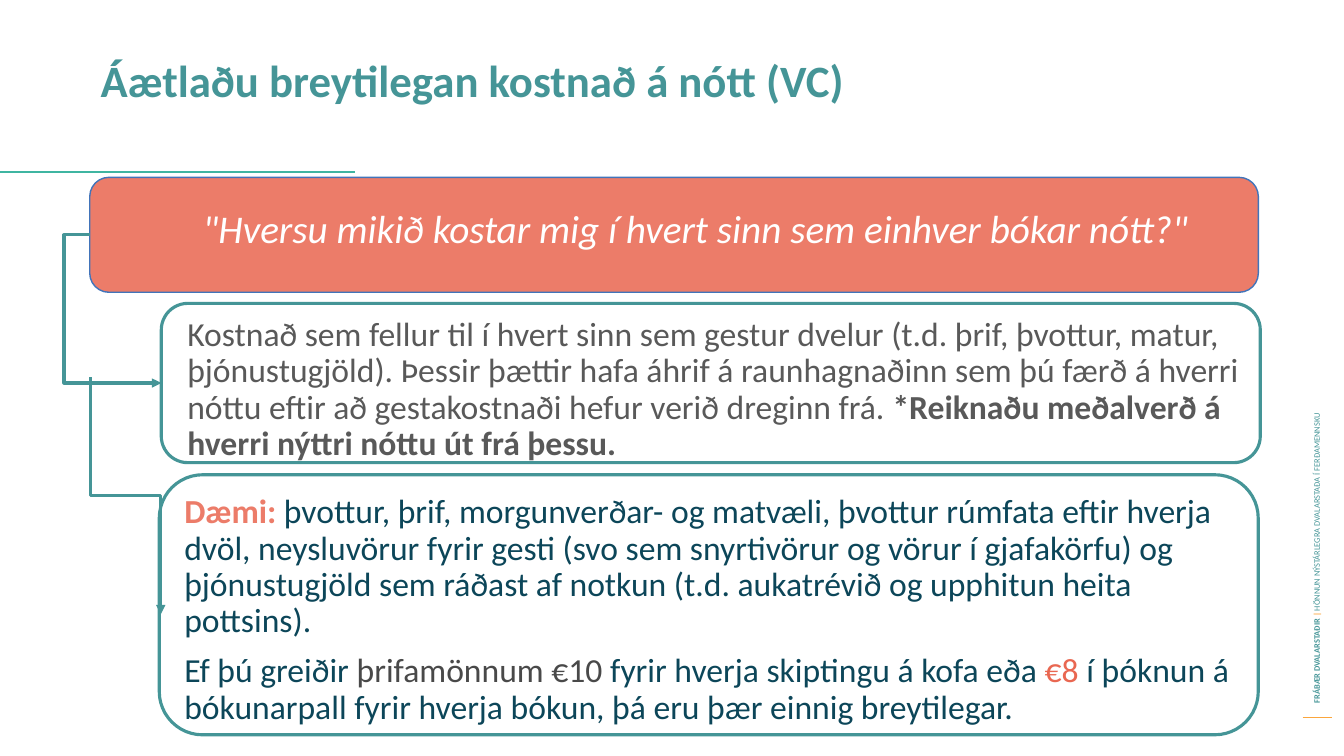
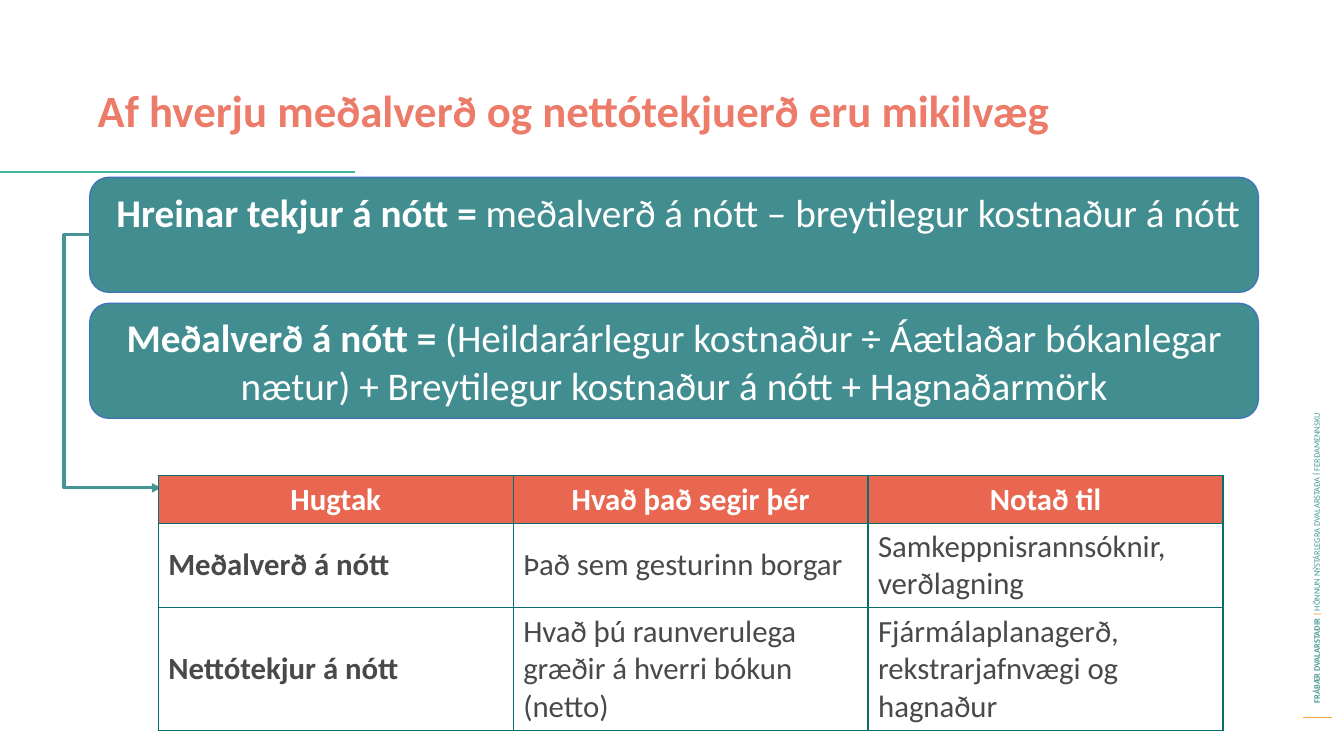
from lxml import etree
from pptx import Presentation
from pptx import util as u
from pptx.dml.color import RGBColor
from pptx.enum import shapes, text
from pptx.oxml import ns

PX = u.Inches(1) // 100
FONT = "Calibri"
TEAL, DEEP_TEAL, GREEN, NAVY = "459597", "418D8F", "3FB5A1", "0C4659"
CORAL, RED, ORANGE, AMBER = "EC7C69", "E96751", "FBA63D", "FBA63B"
BLUE, GRID, GREY, DARK, WHITE = "4174BA", "086D6E", "595959", "494949", "FFFFFF"

# Runs are (text, colour, bold).
FOOTER = [("FRÁBÆR DVALARSTAÐIR ", TEAL, True), ("| ", AMBER, True),
          ("HÖNNUN NÝSTÁRLEGRA DVALARSTAÐA Í FERÐAMENNSKU", TEAL, False)]

COST_TITLE = "Áætlaðu breytilegan kostnað á nótt (VC)"
QUESTION = [('"Hversu mikið kostar mig í hvert sinn sem einhver bókar nótt?"', WHITE, False)]
DEFINITION = [
    ("Kostnað sem fellur til í hvert sinn sem gestur dvelur (t.d. þrif, þvottur, matur, "
     "þjónustugjöld). Þessir þættir hafa áhrif á raunhagnaðinn sem þú færð á hverri nóttu "
     "eftir að gestakostnaði hefur verið dreginn frá. ", GREY, False),
    ("*Reiknaðu meðalverð á hverri nýttri nóttu út frá þessu.", GREY, True)]
EXAMPLES = [
    [("Dæmi: ", CORAL, True),
     ("þvottur, þrif, morgunverðar- og matvæli, þvottur rúmfata eftir hverja dvöl, "
      "neysluvörur fyrir gesti (svo sem snyrtivörur og vörur í gjafakörfu) og þjónustugjöld "
      "sem ráðast af notkun (t.d. aukatrévið og upphitun heita pottsins).", NAVY, False)],
    [("Ef þú greiðir ", NAVY, False), ("þrifamönnum €10 ", DARK, False),
     ("fyrir hverja skiptingu á kofa eða ", NAVY, False), ("€8 ", RED, False),
     ("í þóknun á bókunarpall fyrir hverja bókun, þá eru þær einnig breytilegar.",
      NAVY, False)]]

RATE_TITLE = "Af hverju meðalverð og nettótekjuerð eru mikilvæg"
NET_INCOME = [("Hreinar tekjur á nótt = ", WHITE, True),
              ("meðalverð á nótt – breytilegur kostnaður á nótt", WHITE, False)]
AVERAGE_RATE = [("Meðalverð á nótt = ", WHITE, True),
                ("(Heildarárlegur kostnaður ÷ Áætlaðar bókanlegar nætur) + "
                 "Breytilegur kostnaður á nótt + Hagnaðarmörk", WHITE, False)]
TERMS = [
    ("Hugtak", "Hvað það segir þér", "Notað til"),
    ("Meðalverð á nótt", "Það sem gesturinn borgar", "Samkeppnisrannsóknir, verðlagning"),
    ("Nettótekjur á nótt", "Hvað þú raunverulega græðir á hverri bókun (netto)",
     "Fjármálaplanagerð, rekstrarjafnvægi og hagnaður")]
ROW_HEIGHTS = (47, 84, 122)
COLUMN_WIDTH = 352


def px(*lengths):
    return [length * PX for length in lengths]


def rgb(colour):
    return RGBColor.from_string(colour)


def fill_paragraph(paragraph, runs, size, centred=False, italic=False):
    if centred:
        paragraph.alignment = text.PP_ALIGN.CENTER
    for words, colour, bold in runs:
        run = paragraph.add_run()
        run.text = words
        font = run.font
        font.name, font.size, font.bold, font.italic = FONT, u.Pt(size), bold, italic
        font.color.rgb = rgb(colour)


def add_text(slide, box, paragraphs, size, centred=False, italic=False):
    shape = slide.shapes.add_textbox(*px(*box))
    frame = shape.text_frame
    frame.word_wrap = True
    for index, runs in enumerate(paragraphs):
        paragraph = frame.add_paragraph() if index else frame.paragraphs[0]
        paragraph.line_spacing = 0.9
        if index:
            paragraph.space_before = u.Pt(10)
        if centred:
            properties = paragraph._p.get_or_add_pPr()
            properties.set("marL", str(25 * PX))
            properties.set("indent", str(-25 * PX))
        fill_paragraph(paragraph, runs, size, centred, italic)
    return shape


def add_panel(slide, box, fill=None):
    """Rounded panel: a filled banner, or a teal outline when there is no fill."""
    shape = slide.shapes.add_shape(shapes.MSO_SHAPE.FLOWCHART_ALTERNATE_PROCESS, *px(*box))
    shape.shadow.inherit = False
    if fill:
        shape.fill.solid()
        shape.fill.fore_color.rgb = rgb(fill)
    else:
        shape.fill.background()
    shape.line.color.rgb = rgb(BLUE if fill else TEAL)
    shape.line.width = u.Pt(1 if fill else 2.25)
    return shape


def add_banner(slide, top, fill):
    return add_panel(slide, (89, top, 1159, 114), fill)


def add_line(slide, ends, colour, width, kind=shapes.MSO_CONNECTOR.STRAIGHT):
    line = slide.shapes.add_connector(kind, *px(*ends))
    line.line.color.rgb = rgb(colour)
    line.line.width = u.Pt(width)
    etree.SubElement(line._element.spPr, ns.qn("a:effectLst"))
    return line


def add_elbow_arrow(slide, ends, bend, rotation=0):
    """Bent arrow; bend is the place of the middle leg as a share of the width."""
    arrow = add_line(slide, ends, TEAL, 2.25, shapes.MSO_CONNECTOR.ELBOW)
    properties = arrow._element.spPr
    properties.find(ns.qn("a:xfrm")).set("rot", str(rotation * 60000))
    guides = properties.find(ns.qn("a:prstGeom")).find(ns.qn("a:avLst"))
    etree.SubElement(guides, ns.qn("a:gd"), name="adj1", fmla=f"val {round(bend * 100000)}")
    etree.SubElement(properties.find(ns.qn("a:ln")), ns.qn("a:tailEnd"), type="triangle")


def add_side_arrow(slide, end_y):
    """Arrow that leaves the top banner on its left and comes back at end_y."""
    add_elbow_arrow(slide, (89, 233, 160, end_y), -0.36)


def add_base_slide(presentation, title, colour, left, top):
    slide = presentation.slides.add_slide(presentation.slide_layouts[6])
    add_line(slide, (1292, 712, 1321, 712), ORANGE, 0.75)
    footer = add_text(slide, (1018, 409, 577, 20), [FOOTER], 6)
    footer.rotation = 270
    footer.text_frame.vertical_anchor = text.MSO_ANCHOR.MIDDLE
    add_text(slide, (left, top, 1161, 88), [[(title, colour, True)]], 32)
    add_line(slide, (0, 171, 352, 171), GREEN, 1.5)
    return slide


def set_borders(cell):
    properties = cell._tc.get_or_add_tcPr()
    for side in ("lnL", "lnR", "lnT", "lnB"):
        border = etree.SubElement(properties, ns.qn(f"a:{side}"), w=str(u.Pt(1)))
        fill = etree.SubElement(border, ns.qn("a:solidFill"))
        etree.SubElement(fill, ns.qn("a:srgbClr"), val=GRID)


def add_terms_table(slide, left, top):
    columns = len(TERMS[0])
    table = slide.shapes.add_table(
        len(TERMS), columns,
        *px(left, top, COLUMN_WIDTH * columns, sum(ROW_HEIGHTS))).table
    table.first_row = table.horz_banding = False
    for column in table.columns:
        column.width = COLUMN_WIDTH * PX
    for row_index, (row, height) in enumerate(zip(TERMS, ROW_HEIGHTS)):
        table.rows[row_index].height = height * PX
        header = row_index == 0
        for column_index, words in enumerate(row):
            cell = table.cell(row_index, column_index)
            set_borders(cell)
            if header:
                cell.fill.solid()
                cell.fill.fore_color.rgb = rgb(RED)
            else:
                cell.fill.background()
            cell.vertical_anchor = text.MSO_ANCHOR.MIDDLE
            run = (words, WHITE if header else DARK, header or column_index == 0)
            fill_paragraph(cell.text_frame.paragraphs[0], [run], 22, centred=header)


def build_cost_slide(presentation):
    slide = add_base_slide(presentation, COST_TITLE, TEAL, 90, 53)
    add_banner(slide, 176, CORAL)
    add_text(slide, (109, 203, 1161, 88), [QUESTION], 28, centred=True, italic=True)
    add_text(slide, (176, 310, 1063, 88), [DEFINITION], 24)
    add_panel(slide, (160, 301, 1090, 158))
    add_text(slide, (173, 486, 1063, 88), EXAMPLES, 24)
    add_panel(slide, (158, 471, 1090, 258))
    add_side_arrow(slide, 380)
    add_elbow_arrow(slide, (242, 457, 7, 527), 0.5, rotation=270)


def build_rate_slide(presentation):
    slide = add_base_slide(presentation, RATE_TITLE, CORAL, 87, 83)
    add_banner(slide, 176, DEEP_TEAL)
    add_text(slide, (92, 187, 1161, 88), [NET_INCOME], 28, centred=True)
    add_side_arrow(slide, 484)
    add_terms_table(slide, 157, 472)
    frame = add_banner(slide, 301, DEEP_TEAL).text_frame
    frame.word_wrap = True
    frame.vertical_anchor = text.MSO_ANCHOR.MIDDLE
    fill_paragraph(frame.paragraphs[0], AVERAGE_RATE, 28, centred=True)


def main():
    presentation = Presentation()
    presentation.slide_width, presentation.slide_height = px(1333, 750)
    build_cost_slide(presentation)
    build_rate_slide(presentation)
    presentation.save("out.pptx")


if __name__ == "__main__":
    main()
